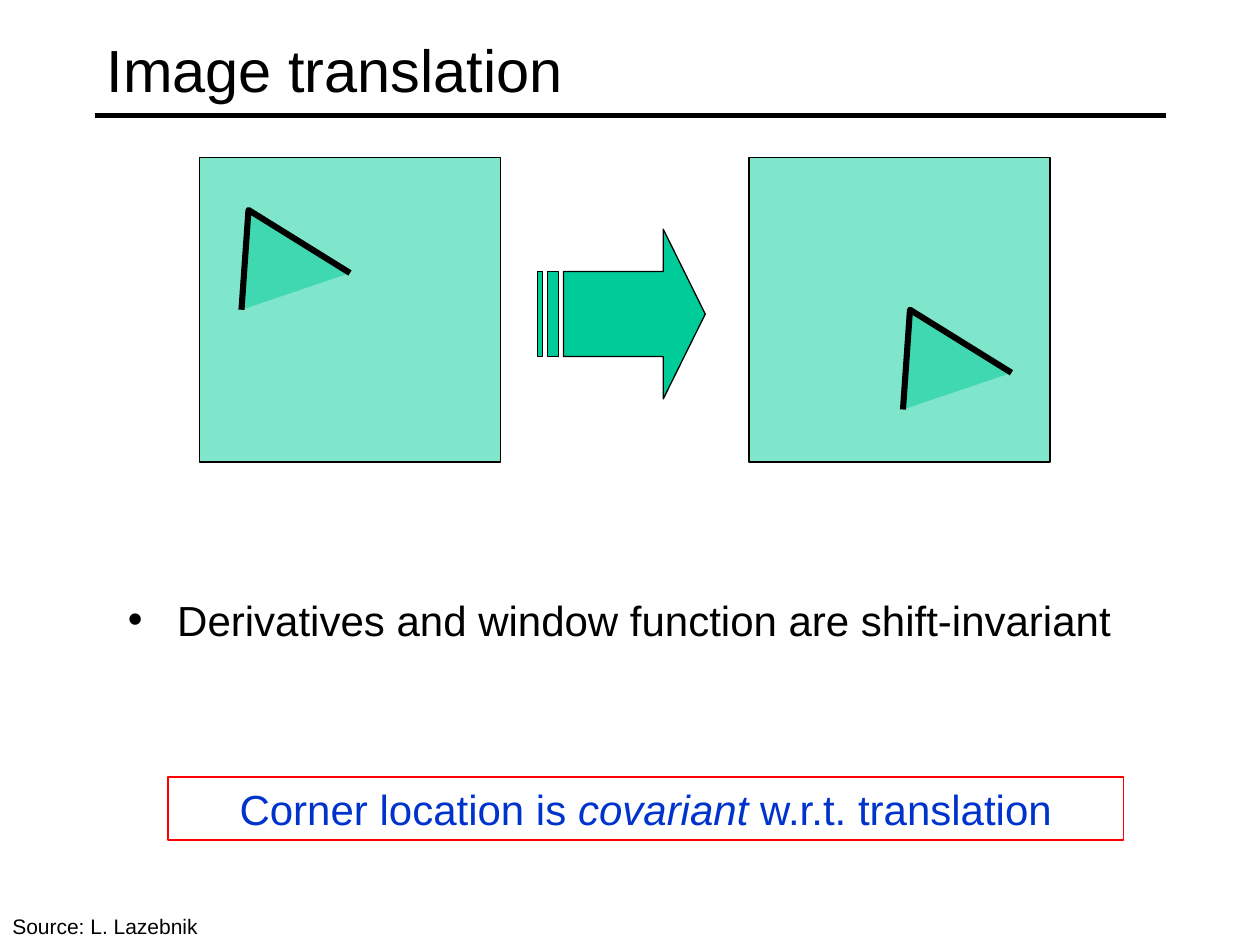
from typing import NamedTuple

from lxml import etree
from pptx import Presentation
from pptx.dml.color import RGBColor
from pptx.enum.shapes import MSO_CONNECTOR, MSO_SHAPE
from pptx.enum.text import MSO_ANCHOR, PP_ALIGN
from pptx.oxml.ns import qn
from pptx.util import Pt

RECTANGLE = MSO_SHAPE.RECTANGLE
STRIPED_ARROW = MSO_SHAPE.STRIPED_RIGHT_ARROW
STRAIGHT = MSO_CONNECTOR.STRAIGHT
TOP, MIDDLE = MSO_ANCHOR.TOP, MSO_ANCHOR.MIDDLE
LEFT, CENTER = PP_ALIGN.LEFT, PP_ALIGN.CENTER

COLORS = {"ink": "000000", "green": "00CC99", "red": "FF0000", "blue": "0033CC"}
FONT = "Arial"
THIN, THICK = 0.75, 3.5
BULLET_INDENT = 28.2
FRAME_TOP, FRAME_WIDTH, FRAME_HEIGHT = 90, 172, 174
CORNER_OUTLINE = ((0, 57), (4.1, 0), (61.9, 36))


class Box(NamedTuple):
    left: float
    top: float
    width: float
    height: float


class Run(NamedTuple):
    text: str
    italic: bool = False


class ImageFrame(NamedTuple):
    left: float
    corner_left: float
    corner_top: float


FRAMES = (ImageFrame(114, 138.2, 120.2), ImageFrame(428, 516, 177))


def color(name: str) -> RGBColor:
    return RGBColor.from_string(COLORS[name])


def in_points(box: Box) -> list:
    return [Pt(length) for length in box]


def paint(shape, fill: str | None, line: str, weight: float, opacity: int = 100) -> None:
    shape.shadow.inherit = False
    shape.line.color.rgb = color(line)
    shape.line.width = Pt(weight)
    if fill is None:
        shape.fill.background()
        return
    shape.fill.solid()
    shape.fill.fore_color.rgb = color(fill)
    if opacity < 100:
        srgb = shape.fill._xPr.find(qn("a:solidFill")).find(qn("a:srgbClr"))
        etree.SubElement(srgb, qn("a:alpha"), val=str(opacity * 1000))


def write(shape, runs: list[Run], size: float, ink: str = "ink", align=LEFT, anchor=TOP):
    """Fill the shape with one paragraph and return that paragraph."""
    frame = shape.text_frame
    frame.word_wrap = True
    frame.vertical_anchor = anchor
    paragraph = frame.paragraphs[0]
    paragraph.alignment = align
    for part in runs:
        run = paragraph.add_run()
        run.text = part.text
        run.font.name = FONT
        run.font.size = Pt(size)
        run.font.italic = part.italic
        run.font.color.rgb = color(ink)
    return paragraph


def add_bullet(paragraph) -> None:
    properties = paragraph._p.get_or_add_pPr()
    properties.set("marL", str(Pt(BULLET_INDENT)))
    properties.set("indent", str(-Pt(BULLET_INDENT)))
    etree.SubElement(properties, qn("a:buFont"), typeface=FONT)
    etree.SubElement(properties, qn("a:buChar"), char="•")


def add_title_rule(shapes) -> None:
    rule = shapes.add_connector(STRAIGHT, Pt(54), Pt(66), Pt(666), Pt(66))
    rule.line.color.rgb = color("ink")
    rule.line.width = Pt(3)
    etree.SubElement(rule._element.spPr, qn("a:effectLst"))


def add_image_frame(shapes, frame: ImageFrame) -> None:
    """Draw a square image with a filled corner whose two edges are stroked."""
    square = shapes.add_shape(
        RECTANGLE, *in_points(Box(frame.left, FRAME_TOP, FRAME_WIDTH, FRAME_HEIGHT))
    )
    paint(square, "green", "ink", THIN, opacity=50)

    start, *rest = [(frame.corner_left + x, frame.corner_top + y) for x, y in CORNER_OUTLINE]
    builder = shapes.build_freeform(*start, scale=Pt(1))
    builder.add_line_segments(rest, close=False)
    corner = builder.convert_to_shape()
    paint(corner, "green", "ink", THICK, opacity=50)
    etree.SubElement(corner.line._get_or_add_ln(), qn("a:round"))


def add_translation_arrow(shapes) -> None:
    arrow = shapes.add_shape(STRIPED_ARROW, *in_points(Box(307, 131, 96, 97)))
    arrow.adjustments[0] = 0.5
    arrow.adjustments[1] = 0.25
    paint(arrow, "green", "ink", THIN)


def main() -> None:
    deck = Presentation()
    deck.slide_width, deck.slide_height = Pt(720), Pt(540)
    shapes = deck.slides.add_slide(deck.slide_layouts[6]).shapes

    add_title_rule(shapes)
    title = shapes.add_textbox(*in_points(Box(54, 6, 612, 66)))
    write(title, [Run("Image translation")], 34, anchor=MIDDLE)

    for frame in FRAMES:
        add_image_frame(shapes, frame)
    add_translation_arrow(shapes)

    property_note = shapes.add_textbox(*in_points(Box(66, 336, 606, 36)))
    add_bullet(
        write(property_note, [Run("Derivatives and window function are shift-invariant")], 24)
    )

    conclusion = shapes.add_shape(RECTANGLE, *in_points(Box(96, 444, 546, 36)))
    paint(conclusion, None, "red", THIN)
    conclusion_runs = [
        Run("Corner location is "),
        Run("covariant ", italic=True),
        Run("w.r.t. translation"),
    ]
    write(conclusion, conclusion_runs, 24, ink="blue", align=CENTER)

    credit = shapes.add_textbox(*in_points(Box(0, 518.4, 139, 21.6)))
    write(credit, [Run("Source: L. Lazebnik")], 12)

    deck.save("out.pptx")


if __name__ == "__main__":
    main()
